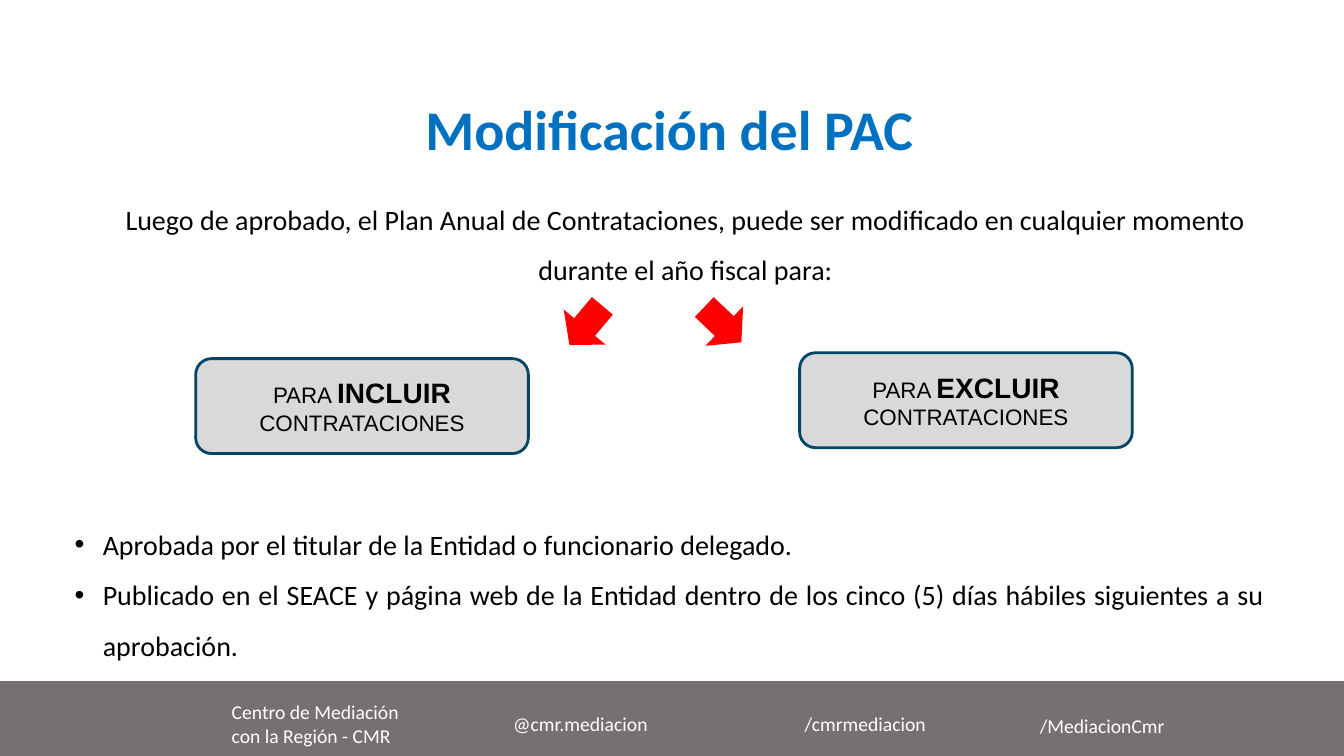
from dataclasses import dataclass

from lxml.etree import SubElement
from pptx import Presentation
from pptx.dml.color import RGBColor
from pptx.enum.shapes import MSO_SHAPE
from pptx.enum.text import MSO_ANCHOR, PP_ALIGN
from pptx.oxml.ns import qn
from pptx.util import Inches, Pt

COLUMNS, ROWS = 160, 90
WIDTH, HEIGHT = Inches(13.33), Inches(7.5)


@dataclass(frozen=True)
class Theme:
    """Colours, fonts and type sizes of the slide."""
    title: str = "0070C0"
    ink: str = "000000"
    footer: str = "767171"
    footer_ink: str = "FFFFFF"
    option: str = "D9D9D9"
    option_edge: str = "034567"
    arrow: str = "FF0000"
    body_font: str = "Calibri"
    option_font: str = "Arial"
    title_size: int = 40
    body_size: int = 20
    option_size: int = 16
    footer_size: int = 14


@dataclass(frozen=True)
class Box:
    """An area measured in grid columns and rows."""
    left: float
    top: float
    width: float
    height: float

    def inner(self, left, top, width, height):
        """Return an area placed relative to this one."""
        return Box(self.left + left, self.top + top, width, height)

    def lengths(self):
        """Return left, top, width and height as slide lengths."""
        column, row = WIDTH / COLUMNS, HEIGHT / ROWS
        return [round(share * unit) for share, unit in
                zip((self.left, self.top, self.width, self.height), (column, row) * 2)]


THEME = Theme()


def style(font, size, color, name=THEME.body_font, bold=False):
    """Set the look of a font."""
    font.size, font.name, font.bold = Pt(size), name, bold
    font.color.rgb = RGBColor.from_string(color)


def add_block(slide, box, preset, fill, edge=None):
    """Add a filled preset shape without shadow."""
    block = slide.shapes.add_shape(preset, *box.lengths())
    block.shadow.inherit = False
    block.fill.solid()
    block.fill.fore_color.rgb = RGBColor.from_string(fill)
    if edge:
        block.line.color.rgb = RGBColor.from_string(edge)
        block.line.width = Pt(2)
    else:
        block.line.fill.background()
    return block


def add_text(slide, box, lines, size, color, align=PP_ALIGN.LEFT, spacing=1.0,
             anchor=MSO_ANCHOR.TOP, bold=False, bullet=False):
    """Add a wrapping text box with one paragraph per line."""
    frame = slide.shapes.add_textbox(*box.lengths()).text_frame
    frame.word_wrap, frame.vertical_anchor = True, anchor
    for index, line in enumerate(lines):
        paragraph = frame.add_paragraph() if index else frame.paragraphs[0]
        paragraph.text = line
        paragraph.alignment, paragraph.line_spacing = align, spacing
        if bullet:
            properties = paragraph._p.get_or_add_pPr()
            properties.set("marL", str(Inches(0.28)))
            properties.set("indent", str(-Inches(0.28)))
            SubElement(properties, qn("a:buFont"), typeface="Arial")
            SubElement(properties, qn("a:buChar"), char="•")
        style(paragraph.font, size, color, bold=bold)


def add_footer(slide, box):
    """Draw the footer band with its contact names."""
    add_block(slide, box, MSO_SHAPE.RECTANGLE, THEME.footer)
    contacts = [
        ("Centro de Mediación con la Región - CMR", 26.4, 2.7, 23.4),
        ("@cmr.mediacion", 59.9, 2.7, 19),
        ("/cmrmediacion", 94.6, 2.7, 19),
        ("/MediacionCmr", 122.6, 2.9, 19),
    ]
    for contact, left, top, width in contacts:
        add_text(slide, box.inner(left, top, width, 4.7), [contact], THEME.footer_size,
                 THEME.footer_ink, anchor=MSO_ANCHOR.MIDDLE)


def add_heading(slide, box):
    """Write the title and the sentence below it."""
    add_text(slide, box.inner(20, 0, 99.4, 8.8), ["Modificación del PAC"],
             THEME.title_size, THEME.title, PP_ALIGN.CENTER, 0.9, MSO_ANCHOR.MIDDLE, bold=True)
    add_text(slide, box.inner(0, 10.2, box.width, 12.7), [
        "Luego de aprobado, el Plan Anual de Contrataciones, puede ser modificado "
        "en cualquier momento durante el año fiscal para:"],
        THEME.body_size, THEME.ink, PP_ALIGN.CENTER, 1.5)


def add_option(slide, box, verb):
    """Draw one rounded box with its emphasised verb."""
    option = add_block(slide, box, MSO_SHAPE.ROUNDED_RECTANGLE, THEME.option, THEME.option_edge)
    frame = option.text_frame
    frame.word_wrap, frame.vertical_anchor = True, MSO_ANCHOR.MIDDLE
    frame.margin_left = frame.margin_right = Inches(0.09)
    frame.margin_top = frame.margin_bottom = Inches(0.04)
    paragraph = frame.paragraphs[0]
    paragraph.alignment = PP_ALIGN.CENTER
    for words, size, bold in (("PARA ", THEME.option_size, False),
                              (verb + " ", THEME.body_size, True),
                              ("CONTRATACIONES", THEME.option_size, False)):
        run = paragraph.add_run()
        run.text = words
        style(run.font, size, THEME.ink, THEME.option_font, bold)


def add_choices(slide, box):
    """Draw the two options and the arrows that lead to them."""
    choices = [
        ("INCLUIR", 0, 7.2, 43.2, 0.2, 40),
        ("EXCLUIR", 71.9, 6.5, 59.5, 0.1, -46.4),
    ]
    for verb, left, top, arrow_left, arrow_top, turn in choices:
        add_option(slide, box.inner(left, top, 39.6, 11.3), verb)
        arrow = add_block(slide, box.inner(arrow_left, arrow_top, 6.5, 6.1),
                          MSO_SHAPE.DOWN_ARROW, THEME.arrow)
        arrow.adjustments[0], arrow.adjustments[1] = 0.5, 0.46
        arrow.rotation = turn


def add_rules(slide, box):
    """Write the bulleted rules."""
    add_text(slide, box, [
        "Aprobada por el titular de la Entidad o funcionario delegado.",
        "Publicado en el SEACE y página web de la Entidad dentro de los cinco (5) "
        "días hábiles siguientes a su aprobación."],
        THEME.body_size, THEME.ink, PP_ALIGN.JUSTIFY, 1.5, bullet=True)


def main():
    """Build and save the presentation."""
    presentation = Presentation()
    presentation.slide_width, presentation.slide_height = WIDTH, HEIGHT
    slide = presentation.slides.add_slide(presentation.slide_layouts[6])
    add_footer(slide, Box(0, 81.1, COLUMNS, 8.9))
    add_heading(slide, Box(10, 11.3, 143.2, 22.9))
    add_choices(slide, Box(23.3, 35.5, 111.5, 18.5))
    add_rules(slide, Box(7.7, 60.2, 144, 19.4))
    presentation.save("out.pptx")


if __name__ == "__main__":
    main()
